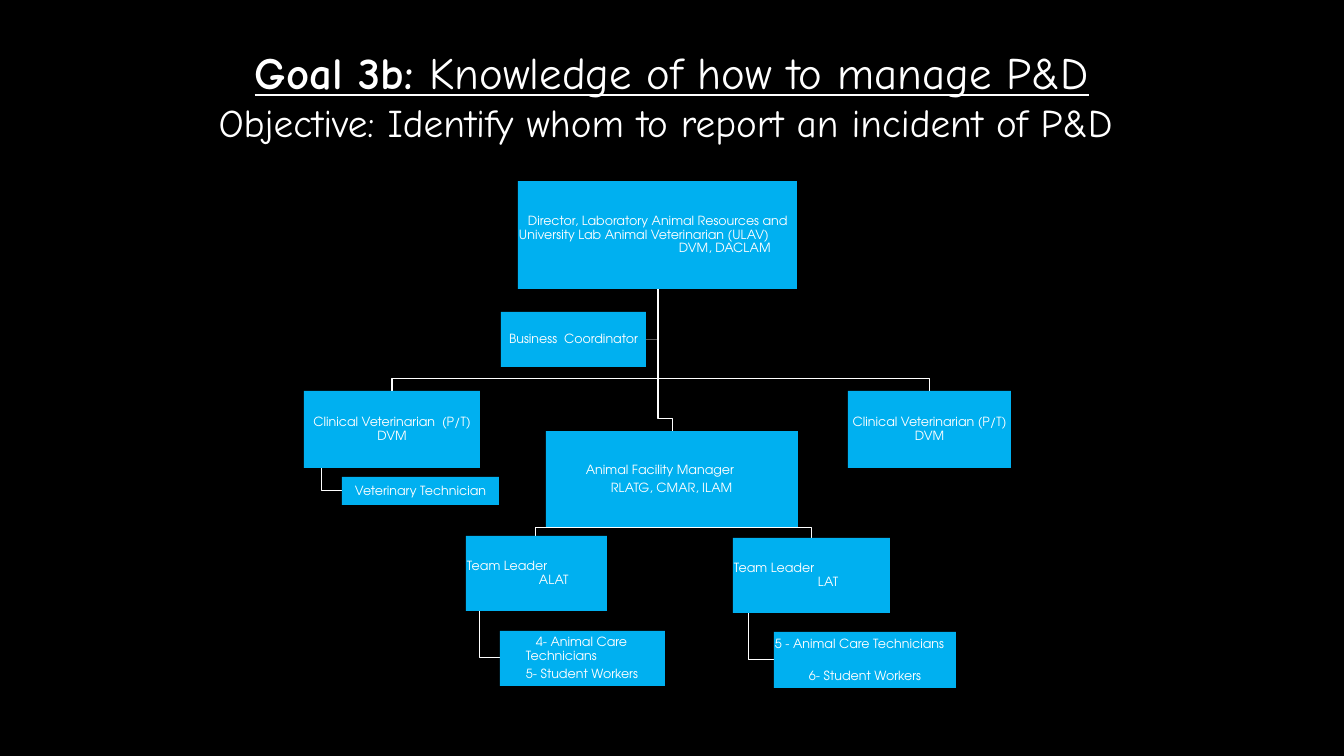
from collections import namedtuple

from pptx import Presentation
from pptx.dml.color import RGBColor
from pptx.enum.shapes import MSO_SHAPE as Shape
from pptx.enum.text import MSO_ANCHOR as Anchor, PP_ALIGN as Align
from pptx.util import Pt

PX = 12192000 / 1344
WHITE, BLACK, BLUE, GREY = "FFFFFF", "000000", "00B0F0", "595959"
TITLE_FONT, CHART_FONT = "Comic Neue", "TeX Gyre Adventor"
BEND = 12

Box = namedtuple("Box", "left top width height")

# Each line is (text, indent or None for centred, space before in points)
POSITIONS = {
    "director": (Box(214, 0, 279, 108), [
        ("Director, Laboratory Animal Resources and", 9, 0),
        ("University Lab Animal Veterinarian (ULAV)", 0, 0),
        ("DVM, DACLAM", 160, 0)]),
    "left vet": (Box(0, 210, 176, 77), [
        ("Clinical Veterinarian  (P/T)", None, 0), ("DVM", None, 0)]),
    "vet technician": (Box(38, 296, 157, 28), [("Veterinary Technician", None, 0)]),
    "manager": (Box(242, 250, 252, 96), [
        ("Animal Facility Manager", 39, 0), ("RLATG, CMAR, ILAM", 64, 3)]),
    "left leader": (Box(162, 355, 141, 75), [("Team Leader", 0, 0), ("ALAT", 72, 0)]),
    "left staff": (Box(196, 450, 165, 55), [
        ("4- Animal Care", 35, 0), ("Technicians", 25, 0), ("5- Student Workers", 25, 3)]),
    "right leader": (Box(429, 357, 157, 75), [("Team Leader", 0, 0), ("LAT", 84, 0)]),
    "right staff": (Box(470, 451, 182, 56), [
        ("5 - Animal Care Technicians", 0, 0), ("6- Student Workers", 34, 13)]),
    "right vet": (Box(544, 210, 163, 77), [
        ("Clinical Veterinarian (P/T)", None, 0), ("DVM", None, 0)]),
    "coordinator": (Box(197, 131, 145, 55), [("Business  Coordinator", None, 0)]),
}
BRANCHES = [("director", "right vet"), ("director", "manager"), ("director", "left vet"),
            ("manager", "right leader"), ("manager", "left leader")]
HANGERS = [("left vet", "vet technician"), ("left leader", "left staff"),
           ("right leader", "right staff")]


def px(length):
    return round(length * PX)


def color(value):
    return RGBColor.from_string(value)


def center_x(box):
    return box.left + box.width / 2


def center_y(box):
    return box.top + box.height / 2


def bottom(box):
    return box.top + box.height


def add_text(paragraph, text, size, font, bold=False, underline=False):
    run = paragraph.add_run()
    run.text = text
    run.font.size = Pt(size)
    run.font.name = font
    run.font.bold = bold
    run.font.underline = underline
    run.font.color.rgb = color(WHITE)


def add_polyline(slide, points, line_color=WHITE):
    builder = slide.shapes.build_freeform(*points[0], scale=PX)
    builder.add_line_segments(points[1:], close=False)
    shape = builder.convert_to_shape()
    shape.shadow.inherit = False
    shape.fill.background()
    shape.line.color.rgb = color(line_color)
    shape.line.width = Pt(0.75)


def add_branch(slide, parent, child):
    """Line from under the parent, along a bar, to the child's top."""
    x, end_x = center_x(parent), center_x(child)
    bar = max(child.top - BEND, bottom(parent))
    points = [(x, bottom(parent)), (x, bar), (end_x, bar), (end_x, child.top)]
    add_polyline(slide, list(dict.fromkeys(points)))


def add_hanger(slide, parent, child):
    """Line from near the parent's left corner to the child's left side."""
    x = parent.left + parent.width / 10
    y = center_y(child)
    add_polyline(slide, [(x, bottom(parent)), (x, y), (child.left, y)])


def add_position(slide, box, lines):
    shape = slide.shapes.add_shape(Shape.RECTANGLE, *map(px, box))
    shape.shadow.inherit = False
    shape.fill.solid()
    shape.fill.fore_color.rgb = color(BLUE)
    shape.line.fill.background()
    frame = shape.text_frame
    frame.word_wrap = True
    frame.vertical_anchor = Anchor.MIDDLE
    frame.margin_left = frame.margin_right = frame.margin_top = frame.margin_bottom = px(1)
    for index, (text, indent, space) in enumerate(lines):
        paragraph = frame.add_paragraph() if index else frame.paragraphs[0]
        paragraph.alignment = Align.CENTER if indent is None else Align.LEFT
        paragraph.line_spacing = 0.9
        paragraph.space_before = Pt(space)
        if indent:
            paragraph._p.get_or_add_pPr().set("marL", str(px(indent)))
        add_text(paragraph, text, 9, CHART_FONT)


def add_title(slide, box):
    frame = slide.shapes.add_textbox(*map(px, box)).text_frame
    frame.word_wrap = True
    frame.vertical_anchor = Anchor.MIDDLE
    goal, objective = frame.paragraphs[0], frame.add_paragraph()
    goal.alignment = objective.alignment = Align.CENTER
    add_text(goal, "Goal 3b: ", 32, TITLE_FONT, bold=True, underline=True)
    add_text(goal, "Knowledge of how to manage P&D", 32, TITLE_FONT, underline=True)
    add_text(objective, "Objective: Identify whom to report an incident of P&D ", 28, TITLE_FONT)


def add_organization_chart(slide, area):
    boxes = {name: box._replace(left=area.left + box.left, top=area.top + box.top)
             for name, (box, _) in POSITIONS.items()}
    director, coordinator = boxes["director"], boxes["coordinator"]
    x, y = center_x(director), center_y(coordinator)
    add_polyline(slide, [(x, bottom(director)), (x, y),
                         (coordinator.left + coordinator.width, y)], GREY)
    for parent, child in BRANCHES:
        add_branch(slide, boxes[parent], boxes[child])
    for parent, child in HANGERS:
        add_hanger(slide, boxes[parent], boxes[child])
    for name, (_, lines) in POSITIONS.items():
        add_position(slide, boxes[name], lines)


def main():
    presentation = Presentation()
    presentation.slide_width, presentation.slide_height = px(1344), px(756)
    slide = presentation.slides.add_slide(presentation.slide_layouts[6])
    slide.background.fill.solid()
    slide.background.fill.fore_color.rgb = color(BLACK)
    add_title(slide, Box(0, 33, 1344, 124))
    add_organization_chart(slide, Box(304, 181, 708, 507))
    presentation.save("out.pptx")


if __name__ == "__main__":
    main()
